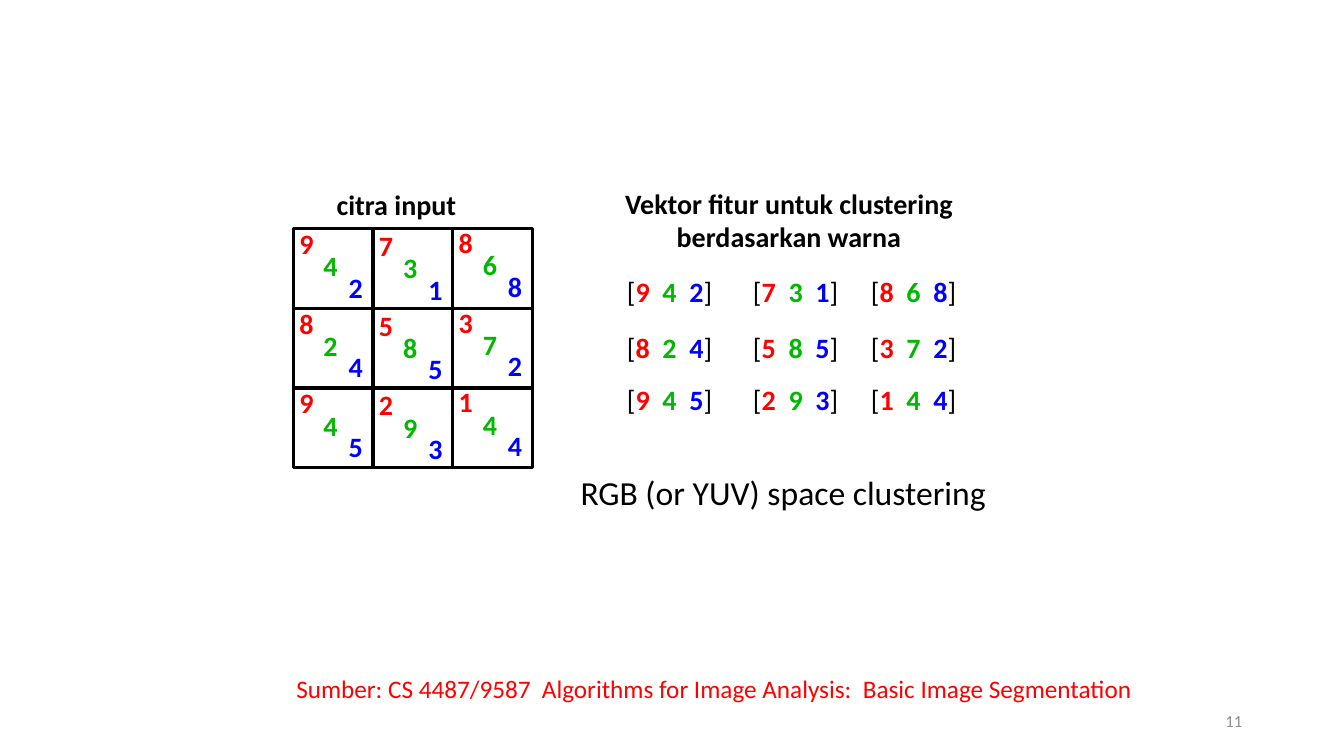
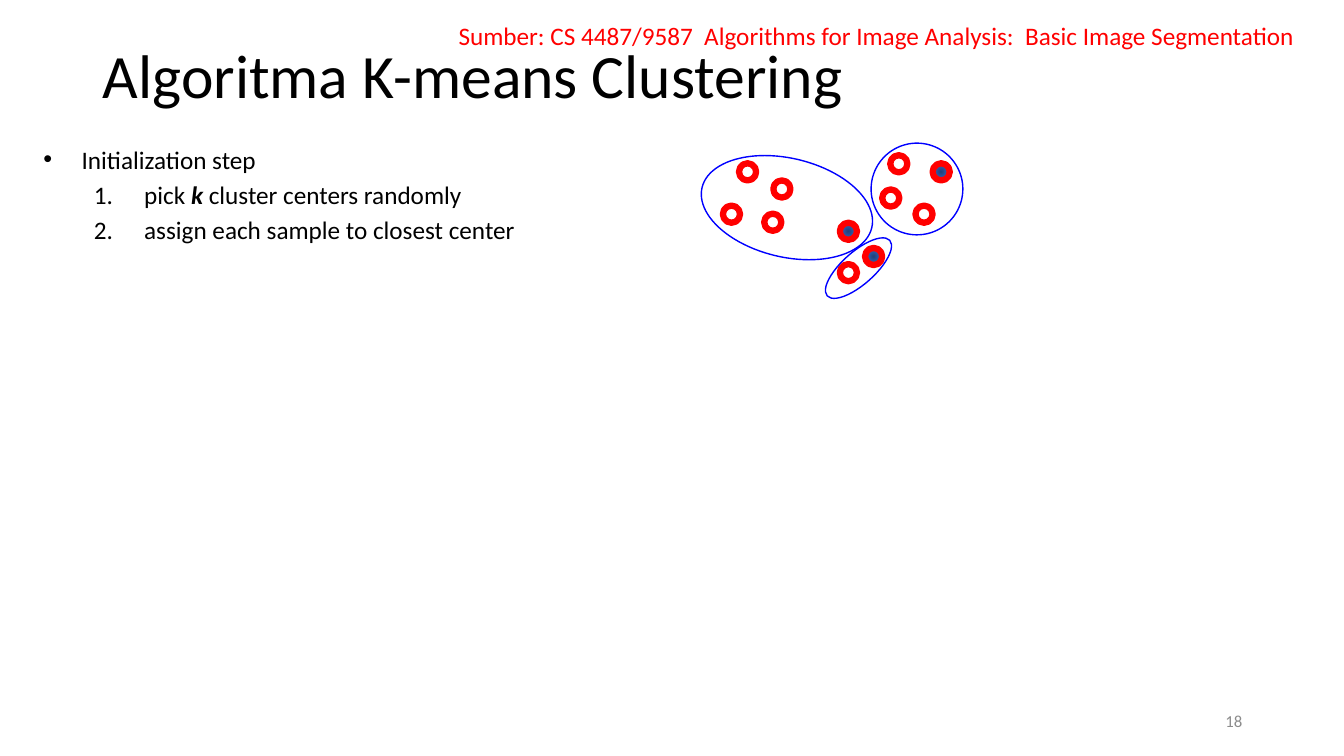
import dataclasses

import lxml.etree
import pptx
import pptx.dml.color
import pptx.enum.shapes
import pptx.enum.text
import pptx.oxml
import pptx.oxml.ns
import pptx.util

Inches = pptx.util.Inches
Pt = pptx.util.Pt
ALIGN = pptx.enum.text.PP_ALIGN
ANCHOR = pptx.enum.text.MSO_ANCHOR
SHAPE = pptx.enum.shapes.MSO_SHAPE


@dataclasses.dataclass(frozen=True)
class Theme:
    """Colours, font and type sizes shared by the slides."""
    font: str = "Calibri"
    black: str = "000000"
    red: str = "FF0000"
    green: str = "00B800"
    blue: str = "0000FF"
    grey: str = "8C8C8C"
    centre_stops: tuple = ((0, "23427A"), (50, "315EAD"), (100, "3A6FCE"))
    title: int = 44
    statement: int = 24
    label: int = 20
    body: int = 18
    number: int = 12

    @property
    def channels(self):
        """Return the colours of the three pixel channels."""
        return self.red, self.green, self.blue


@dataclasses.dataclass(frozen=True)
class Box:
    """A rectangle in inches."""
    left: float
    top: float
    width: float
    height: float

    def inner(self, left, top, width, height):
        """Return a box placed relative to this one."""
        return Box(self.left + left, self.top + top, width, height)

    @property
    def lengths(self):
        """Return left, top, width and height as lengths."""
        return tuple(Inches(value) for value in dataclasses.astuple(self))


THEME = Theme()
SOURCE = "Sumber: CS 4487/9587  Algorithms for Image Analysis:  Basic Image Segmentation"
PIXELS = (
    ((9, 4, 2), (7, 3, 1), (8, 6, 8)),
    ((8, 2, 4), (5, 8, 5), (3, 7, 2)),
    ((9, 4, 5), (2, 9, 3), (1, 4, 4)),
)
SAMPLES = (
    (0.73, 0.37), (0.23, 0.62), (0.64, 0.70), (0.39, 0.20),
    (1.81, 0.46), (1.39, 1.20), (2.14, 0.62), (1.89, 0.12),
)
CENTRES = ((1.39, 0.79), (1.64, 1.04), (2.31, 0.20))
CLUSTERS = (
    ((1.70, 0, 0.91, 0.91), 23.5),
    ((1.16, 1.08, 0.83, 0.32), 318.4),
    ((0, 0.15, 1.73, 0.98), 13.3),
)


def rgb(colour):
    """Turn a hex string into a colour."""
    return pptx.dml.color.RGBColor.from_string(colour)


def style_font(font, size=None, colour=THEME.black, bold=None):
    """Apply the theme font with a size, colour and weight."""
    font.name = THEME.font
    font.color.rgb = rgb(colour)
    font.bold = bold
    if size:
        font.size = Pt(size)


def add_text(slide, box, size, text="", colour=THEME.black, bold=None, align=ALIGN.LEFT):
    """Add a one-paragraph text box and return the paragraph."""
    frame = slide.shapes.add_textbox(*box.lengths).text_frame
    frame.word_wrap = True
    paragraph = frame.paragraphs[0]
    paragraph.alignment = align
    style_font(paragraph.font, size, colour, bold)
    paragraph.text = text
    return paragraph


def add_outline(slide, preset, box, colour, weight, rotation=0):
    """Add an unfilled preset shape."""
    outline = slide.shapes.add_shape(preset, *box.lengths)
    outline.shadow.inherit = False
    outline.fill.background()
    outline.line.color.rgb = rgb(colour)
    outline.line.width = Pt(weight)
    outline.rotation = rotation
    return outline


def fill_radially(shape, stops):
    """Replace a shape's empty fill with a circular gradient."""
    stop_list = "".join(
        f'<a:gs pos="{position * 1000}"><a:srgbClr val="{colour}"/></a:gs>'
        for position, colour in stops)
    gradient = pptx.oxml.parse_xml(
        f'<a:gradFill {pptx.oxml.ns.nsdecls("a")}><a:gsLst>{stop_list}</a:gsLst>'
        '<a:path path="circle"><a:fillToRect l="50000" t="50000" r="50000" b="50000"/>'
        '</a:path></a:gradFill>')
    properties = shape.element.spPr
    properties.replace(properties.find(pptx.oxml.ns.qn("a:noFill")), gradient)


def add_source(slide, box):
    """Add the credit line."""
    add_text(slide, box, THEME.body, SOURCE, THEME.red)


def add_slide_number(slide, number):
    """Add the page number at the lower right."""
    add_text(slide, Box(9.42, 7.0, 3, 0.3), THEME.number, str(number), THEME.grey,
             align=ALIGN.RIGHT)


def add_pixel(slide, box, values):
    """Write the three channel values along the diagonal of a cell."""
    offsets = ((-0.04, -0.07), (0.20, 0.15), (0.45, 0.36))
    for value, colour, (dx, dy) in zip(values, THEME.channels, offsets):
        add_text(slide, box.inner(dx, dy, 0.5, 0.44), THEME.label, str(value), colour, True)


def add_input_image(slide, box):
    """Draw the captioned pixel grid."""
    side = box.width / 3
    column_drops = (0, 0.02, -0.01)
    add_text(slide, box.inner(0.33, -0.46, 1.6, 0.44), THEME.label, "citra input", bold=True)
    for row, pixels in enumerate(PIXELS):
        for column, values in enumerate(pixels):
            cell = box.inner(column * side, row * side, side, side)
            add_outline(slide, SHAPE.RECTANGLE, cell, THEME.black, 2.25)
            add_pixel(slide, cell.inner(0, column_drops[column], side, side), values)


def add_vector(slide, box, values):
    """Write one bracketed colour vector."""
    paragraph = add_text(slide, box, THEME.label)
    parts = [("[", THEME.black, False)]
    for value, colour, gap in zip(values, THEME.channels, ("  ", "  ", "")):
        parts.append((f"{value}{gap}", colour, True))
    parts.append(("]", THEME.black, False))
    for text, colour, bold in parts:
        run = paragraph.add_run()
        run.text = text
        style_font(run.font, colour=colour, bold=bold)


def add_feature_vectors(slide, box):
    """Write the heading, the grid of vectors and the conclusion."""
    add_text(slide, box.inner(0.09, 0, 4.15, 0.77), THEME.label,
             "Vektor fitur untuk clustering berdasarkan warna", bold=True, align=ALIGN.CENTER)
    for top, pixels in zip((0.87, 1.43, 1.95), PIXELS):
        for left, values in zip((0.46, 1.71, 2.88), pixels):
            add_vector(slide, box.inner(left, top, 1.33, 0.44), values)
    add_text(slide, box.inner(0, 2.83, box.width, 0.5), THEME.statement,
             "RGB (or YUV) space clustering")


def place(placeholder, box):
    """Move a text placeholder and return its frame, top anchored."""
    placeholder.left, placeholder.top, placeholder.width, placeholder.height = box.lengths
    frame = placeholder.text_frame
    frame.auto_size = pptx.enum.text.MSO_AUTO_SIZE.NONE
    frame.vertical_anchor = ANCHOR.TOP
    return frame


def add_title(slide, box, text):
    """Fill the title placeholder."""
    paragraph = place(slide.shapes.title, box).paragraphs[0]
    paragraph.text = text
    paragraph.alignment = ALIGN.LEFT
    paragraph.line_spacing = 0.9
    style_font(paragraph.font, THEME.title)


def indent(paragraph, margin, hanging, numbered):
    """Set the hanging indent and, if asked, automatic numbering."""
    properties = paragraph._p.get_or_add_pPr()
    properties.set("marL", str(Inches(margin)))
    properties.set("indent", str(-Inches(hanging)))
    if numbered:
        bullet_font = lxml.etree.SubElement(properties, pptx.oxml.ns.qn("a:buFont"))
        bullet_font.set("typeface", THEME.font)
        numbering = lxml.etree.SubElement(properties, pptx.oxml.ns.qn("a:buAutoNum"))
        numbering.set("type", "arabicPeriod")


def add_steps(slide, box):
    """Fill the body placeholder with the initialization steps."""
    frame = place(slide.placeholders[1], box)
    steps = (
        (0, ("Initialization step",)),
        (1, ("pick ", "k", " cluster centers randomly")),
        (1, ("assign each sample to closest center",)),
    )
    for position, (level, texts) in enumerate(steps):
        paragraph = frame.add_paragraph() if position else frame.paragraphs[0]
        paragraph.level = level
        indent(paragraph, *((1, 0.5) if level else (0.38, 0.38)), numbered=level == 1)
        style_font(paragraph.font, THEME.body)
        for text in texts:
            run = paragraph.add_run()
            run.text = text
            if text == "k":
                run.font.bold = run.font.italic = True


def add_clusters(slide, box):
    """Draw samples, cluster centres and the ellipses around them."""
    diameter = 0.17
    for left, top in SAMPLES + CENTRES:
        sample = add_outline(slide, SHAPE.OVAL, box.inner(left, top, diameter, diameter),
                             THEME.red, 4.5)
        if (left, top) in CENTRES:
            fill_radially(sample, THEME.centre_stops)
    for area, rotation in CLUSTERS:
        add_outline(slide, SHAPE.OVAL, box.inner(*area), THEME.blue, 1, rotation)


def build_features_slide(deck):
    """Build the slide on colour feature vectors."""
    slide = deck.slides.add_slide(deck.slide_layouts[6])
    add_input_image(slide, Box(2.91, 2.27, 2.37, 2.37))
    add_feature_vectors(slide, Box(5.66, 1.8, 4.5, 3.33))
    add_source(slide, Box(2.84, 6.63, 10.38, 0.4))
    add_slide_number(slide, 11)


def build_kmeans_slide(deck):
    """Build the slide on the k-means initialization."""
    slide = deck.slides.add_slide(deck.slide_layouts[1])
    add_title(slide, Box(0.92, 0.4, 11.5, 1.45), "Algoritma K-means Clustering")
    add_steps(slide, Box(0.33, 1.38, 7, 1.5))
    add_clusters(slide, Box(6.94, 1.42, 2.61, 1.55))
    add_source(slide, Box(4.45, 0.15, 8.77, 0.4))
    add_slide_number(slide, 18)


def main():
    """Build and save the deck."""
    deck = pptx.Presentation()
    deck.slide_width, deck.slide_height = Inches(13.33), Inches(7.5)
    build_features_slide(deck)
    build_kmeans_slide(deck)
    deck.save("out.pptx")


if __name__ == "__main__":
    main()
